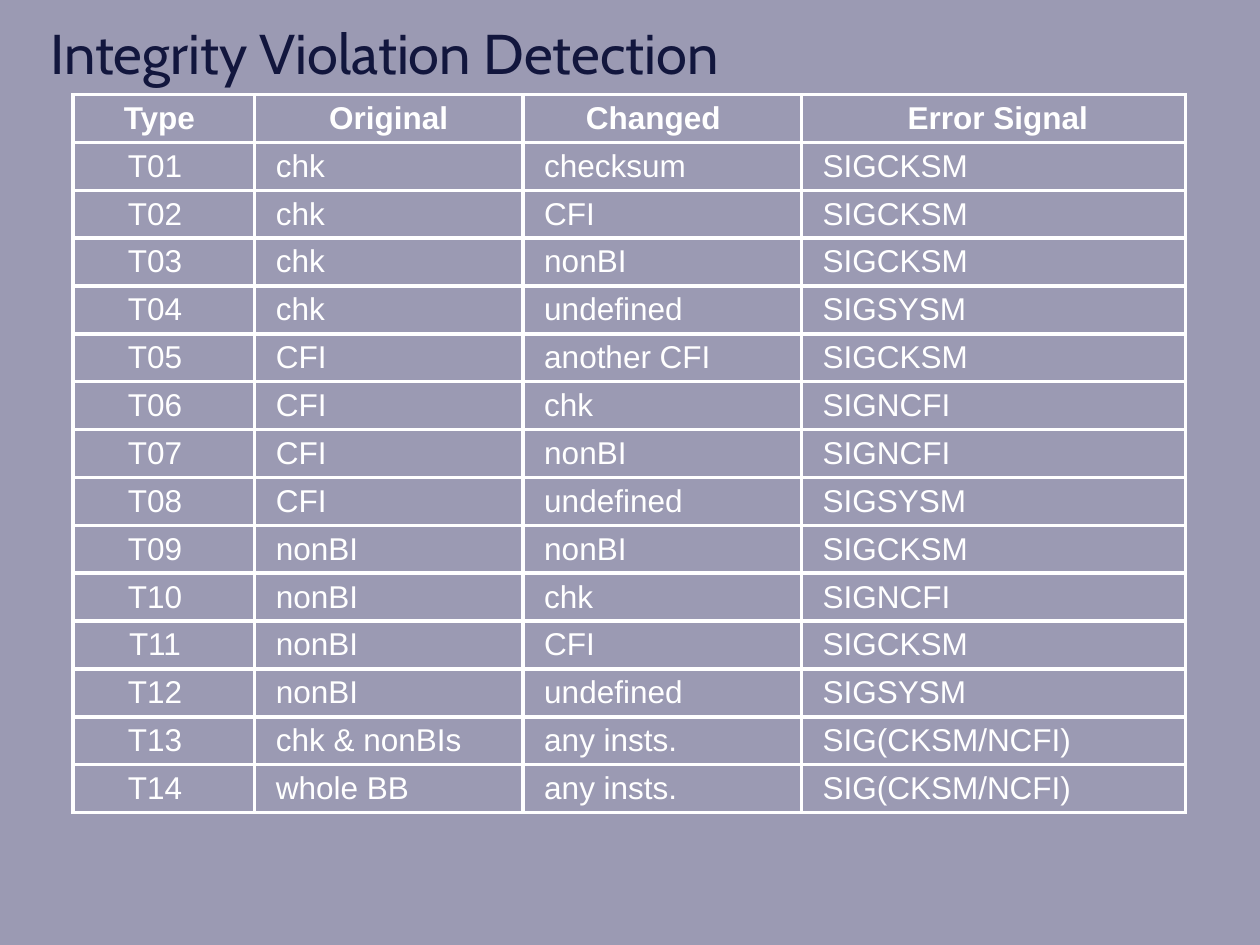
from lxml.etree import SubElement
from pptx import Presentation
from pptx.dml.color import RGBColor
from pptx.enum.text import MSO_ANCHOR, PP_ALIGN
from pptx.oxml.ns import qn
from pptx.util import Inches, Pt

SLIDE_WIDTH, SLIDE_HEIGHT = Inches(10), Inches(7.5)
BACKGROUND, NAVY, WHITE = "9B9AB3", "12163D", "FFFFFF"
TITLE_BOX = (0.03, 0.01, 0.9, 0.09)
TABLE_BOX = (0.058, 0.1, 0.883, 0.76)
COLUMN_SHARES = (1.44, 2.13, 2.21, 3.05)
INSET = 0.1
SPACE = 0.07
HEADERS = ("Type", "Original", "Changed", "Error Signal")
HEADER_SPACES = ((0, 1), (1, 1), (1, 3), (1, 0))
BODY_SPACES = ((0, 2), (1, 0), (1, 0), (1, 0))
VIOLATIONS = (
    ("chk", "checksum", "SIGCKSM"),
    ("chk", "CFI", "SIGCKSM"),
    ("chk", "nonBI", "SIGCKSM"),
    ("chk", "undefined", "SIGSYSM"),
    ("CFI", "another CFI", "SIGCKSM"),
    ("CFI", "chk", "SIGNCFI"),
    ("CFI", "nonBI", "SIGNCFI"),
    ("CFI", "undefined", "SIGSYSM"),
    ("nonBI", "nonBI", "SIGCKSM"),
    ("nonBI", "chk", "SIGNCFI"),
    ("nonBI", "CFI", "SIGCKSM"),
    ("nonBI", "undefined", "SIGSYSM"),
    ("chk & nonBIs", "any insts.", "SIG(CKSM/NCFI)"),
    ("whole BB", "any insts.", "SIG(CKSM/NCFI)"),
)


def color(value):
    return RGBColor.from_string(value)


def place(box):
    left, top, width, height = box
    return (int(left * SLIDE_WIDTH), int(top * SLIDE_HEIGHT),
            int(width * SLIDE_WIDTH), int(height * SLIDE_HEIGHT))


def write_text(text_frame, text, *, size, font, fill, bold=False, align=PP_ALIGN.LEFT):
    paragraph = text_frame.paragraphs[0]
    paragraph.alignment = align
    run = paragraph.add_run()
    run.text = text
    run.font.size = Pt(size)
    run.font.name = font
    run.font.bold = bold
    run.font.color.rgb = color(fill)


def add_borders(cell, line_color, width):
    properties = cell._tc.get_or_add_tcPr()
    for position, side in enumerate(("lnL", "lnR", "lnT", "lnB")):
        line = SubElement(properties, qn(f"a:{side}"), w=str(Pt(width)))
        solid = SubElement(line, qn("a:solidFill"))
        SubElement(solid, qn("a:srgbClr"), val=line_color)
        properties.insert(position, line)


def add_title(slide, box, text):
    title = slide.shapes.title
    title.left, title.top, title.width, title.height = place(box)
    title.text_frame.vertical_anchor = MSO_ANCHOR.MIDDLE
    write_text(title.text_frame, text, size=32, font="Cabin", fill=NAVY)


def format_cell(cell, text, spaces, *, bold, align):
    before, after = spaces
    cell.margin_left = Inches(INSET + before * SPACE)
    cell.margin_right = Inches(INSET + after * SPACE)
    cell.margin_top, cell.margin_bottom = Inches(0.04), Inches(0.05)
    cell.vertical_anchor = MSO_ANCHOR.BOTTOM
    cell.fill.background()
    add_borders(cell, WHITE, 2.25)
    write_text(cell.text_frame, text, size=18, font="Arial", fill=WHITE,
               bold=bold, align=align)


def add_violation_table(slide, box):
    rows = [HEADERS] + [(f"T{number:02d}", *violation)
                        for number, violation in enumerate(VIOLATIONS, 1)]
    left, top, width, height = place(box)
    table = slide.shapes.add_table(len(rows), len(HEADERS), left, top, width, height).table
    table.horz_banding = False
    for column, share in zip(table.columns, COLUMN_SHARES):
        column.width = int(width * share / sum(COLUMN_SHARES))
    for row_index, texts in enumerate(rows):
        is_header = row_index == 0
        table.rows[row_index].height = height // len(rows)
        spaces = HEADER_SPACES if is_header else BODY_SPACES
        for column_index, text in enumerate(texts):
            centered = is_header or column_index == 0
            format_cell(table.cell(row_index, column_index), text, spaces[column_index],
                        bold=is_header,
                        align=PP_ALIGN.CENTER if centered else PP_ALIGN.LEFT)


def main():
    presentation = Presentation()
    presentation.slide_width, presentation.slide_height = SLIDE_WIDTH, SLIDE_HEIGHT
    slide = presentation.slides.add_slide(presentation.slide_layouts.get_by_name("Title Only"))
    slide.background.fill.solid()
    slide.background.fill.fore_color.rgb = color(BACKGROUND)
    add_title(slide, TITLE_BOX, "Integrity Violation Detection")
    add_violation_table(slide, TABLE_BOX)
    presentation.save("out.pptx")


if __name__ == "__main__":
    main()
